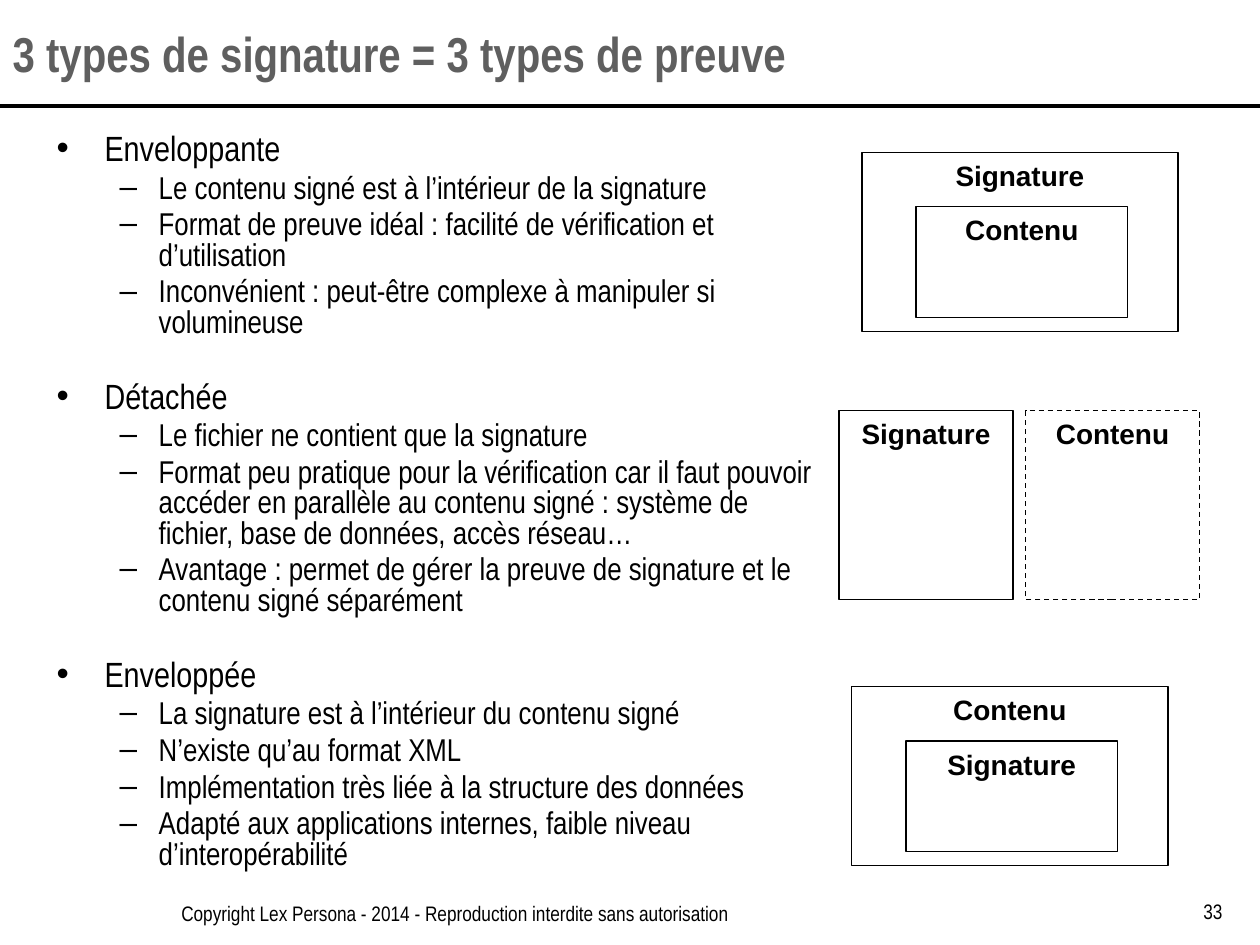
from lxml import etree
from pptx import Presentation
from pptx import util as u
from pptx.dml.color import RGBColor
from pptx.enum import dml, shapes, text
from pptx.oxml.ns import qn

COLORS = {"title": "5F5F5F", "ink": "000000"}
NARROW, PLAIN = "Arial Narrow", "Arial"

SIGNATURE_TYPES = [
    ("Enveloppante", [
        "Le contenu signé est à l’intérieur de la signature",
        "Format de preuve idéal : facilité de vérification et d’utilisation",
        "Inconvénient : peut-être complexe à manipuler si volumineuse",
    ]),
    ("Détachée", [
        "Le fichier ne contient que la signature",
        "Format peu pratique pour la vérification car il faut pouvoir accéder en parallèle "
        "au contenu signé : système de fichier, base de données, accès réseau…",
        "Avantage : permet de gérer la preuve de signature et le contenu signé séparément",
    ]),
    ("Enveloppée", [
        "La signature est à l’intérieur du contenu signé",
        "N’existe qu’au format XML",
        "Implémentation très liée à la structure des données",
        "Adapté aux applications internes, faible niveau d’interopérabilité",
    ]),
]


class SlideBuilder:
    def __init__(self, slide):
        self.slide = slide

    def place(self, shape, left, top, width, height):
        shape.left, shape.top = u.Inches(left), u.Inches(top)
        shape.width, shape.height = u.Inches(width), u.Inches(height)

    def add_run(self, paragraph, words, size, font=NARROW, color="ink", bold=False):
        run = paragraph.add_run()
        run.text = words
        run.font.name, run.font.size, run.font.bold = font, u.Pt(size), bold
        run.font.color.rgb = RGBColor.from_string(COLORS[color])

    def title(self, words):
        shape = self.slide.shapes.title
        self.place(shape, 0, 0, 10, 0.84)
        frame = shape.text_frame
        frame.auto_size = text.MSO_AUTO_SIZE.NONE
        frame.vertical_anchor = text.MSO_ANCHOR.MIDDLE
        frame.paragraphs[0].alignment = text.PP_ALIGN.LEFT
        self.add_run(frame.paragraphs[0], words, 28, color="title", bold=True)

    def rule(self, top):
        line = self.slide.shapes.add_connector(
            shapes.MSO_CONNECTOR.STRAIGHT, 0, u.Inches(top), u.Inches(10), u.Inches(top))
        line.line.color.rgb = RGBColor.from_string(COLORS["ink"])
        line.line.width = u.Pt(2.5)
        etree.SubElement(line._element.spPr, qn("a:effectLst"))

    def bullet(self, paragraph, words, level, before):
        mark, margin, hanging, size = [("•", 0.38, 0.38, 20), ("–", 0.81, 0.31, 18)][level]
        paragraph.level = level
        paragraph.alignment = text.PP_ALIGN.LEFT
        paragraph.line_spacing = 0.8
        paragraph.space_before = u.Pt(before)
        properties = paragraph._p.get_or_add_pPr()
        properties.set("marL", str(u.Inches(margin)))
        properties.set("indent", str(-u.Inches(hanging)))
        etree.SubElement(properties, qn("a:buChar"), char=mark)
        self.add_run(paragraph, words, size)

    def outline(self, groups):
        shape = self.slide.placeholders[1]
        self.place(shape, 0.35, 1.02, 6.26, 5.48)
        frame = shape.text_frame
        frame.auto_size = text.MSO_AUTO_SIZE.NONE
        frame.vertical_anchor = text.MSO_ANCHOR.TOP
        for index, (heading, points) in enumerate(groups):
            paragraph = frame.add_paragraph() if index else frame.paragraphs[0]
            self.bullet(paragraph, heading, 0, 24.7 if index else 0)
            for point in points:
                self.bullet(frame.add_paragraph(), point, 1, 3.7)

    def label(self, words, left, top, width, height, alignment=text.PP_ALIGN.LEFT):
        box = self.slide.shapes.add_textbox(0, 0, 0, 0)
        self.place(box, left, top, width, height)
        box.text_frame.word_wrap = True
        paragraph = box.text_frame.paragraphs[0]
        paragraph.alignment = alignment
        self.add_run(paragraph, words, 12)

    def box(self, words, left, top, width, height, dashed=False):
        shape = self.slide.shapes.add_shape(shapes.MSO_SHAPE.RECTANGLE, 0, 0, 0, 0)
        self.place(shape, left, top, width, height)
        shape.shadow.inherit = False
        shape.fill.background()
        shape.line.color.rgb = RGBColor.from_string(COLORS["ink"])
        shape.line.width = u.Pt(0.75)
        if dashed:
            shape.line.dash_style = dml.MSO_LINE.DASH
        frame = shape.text_frame
        frame.word_wrap = False
        frame.vertical_anchor = text.MSO_ANCHOR.TOP
        frame.paragraphs[0].alignment = text.PP_ALIGN.CENTER
        self.add_run(frame.paragraphs[0], words, 16, font=PLAIN, bold=True)

    def nested_boxes(self, outer, inner, left, top):
        self.box(outer, left, top, 2.51, 1.42)
        self.box(inner, left + 0.43, top + 0.43, 1.68, 0.88)

    def separate_boxes(self, first, second, left, top):
        self.box(first, left, top, 1.38, 1.5)
        self.box(second, left + 1.48, top, 1.38, 1.5, dashed=True)


def main():
    presentation = Presentation()
    presentation.slide_width, presentation.slide_height = u.Inches(10), u.Inches(7.5)
    builder = SlideBuilder(presentation.slides.add_slide(presentation.slide_layouts[1]))

    builder.rule(0.84)
    builder.title("3 types de signature = 3 types de preuve")
    builder.outline(SIGNATURE_TYPES)
    builder.nested_boxes("Signature", "Contenu", 6.84, 1.21)
    builder.separate_boxes("Signature", "Contenu", 6.66, 3.26)
    builder.nested_boxes("Contenu", "Signature", 6.76, 5.45)
    builder.label("Copyright Lex Persona - 2014 - Reproduction interdite sans autorisation",
                  1.34, 7.1, 7.42, 0.34)
    builder.label("33", 9.08, 7.08, 0.72, 0.37, text.PP_ALIGN.RIGHT)

    presentation.save("out.pptx")


if __name__ == "__main__":
    main()
